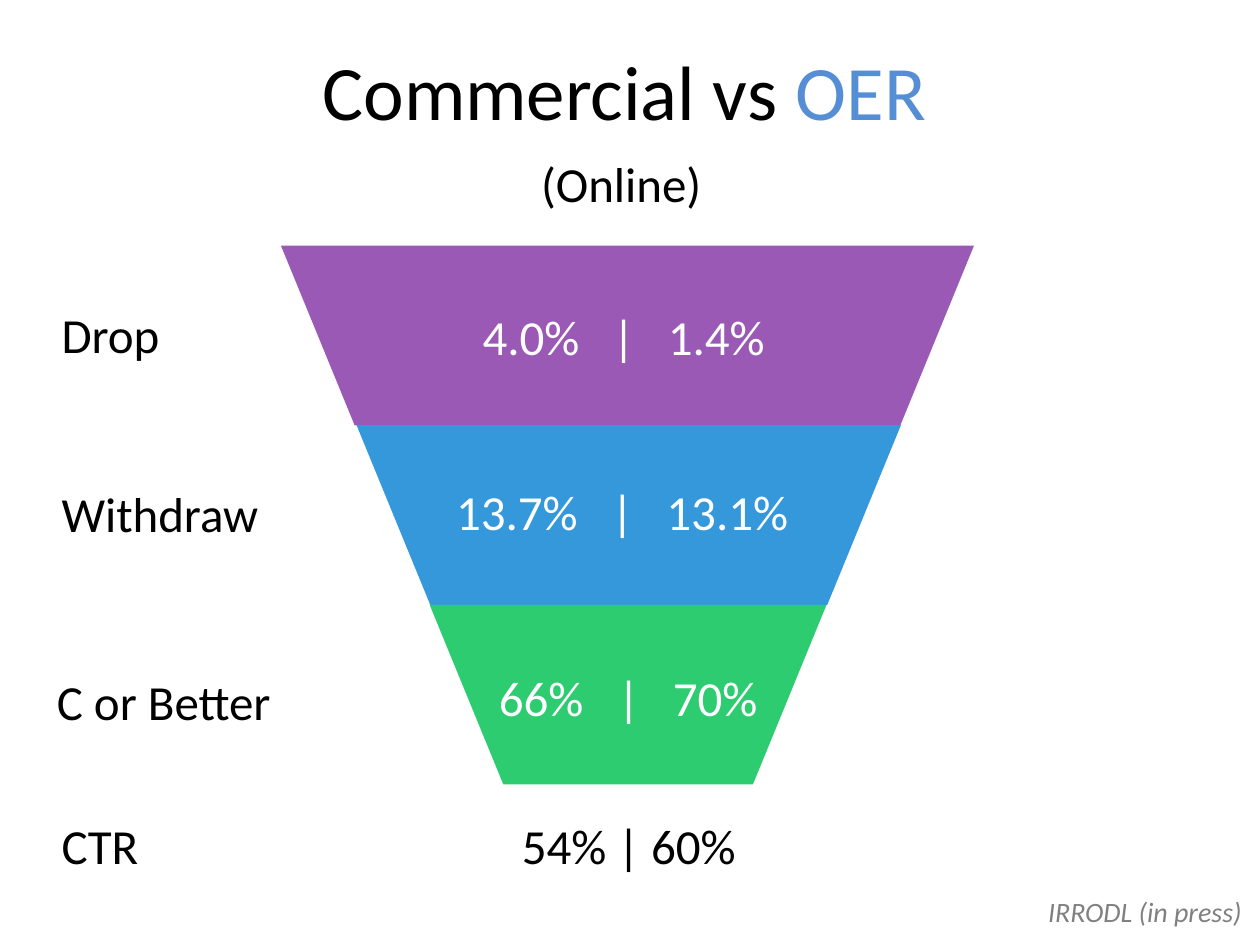
from dataclasses import dataclass

from lxml import etree
from pptx import Presentation
from pptx.dml.color import RGBColor
from pptx.enum.shapes import MSO_SHAPE
from pptx.enum.text import MSO_ANCHOR, MSO_AUTO_SIZE, PP_ALIGN
from pptx.oxml.ns import qn
from pptx.util import Inches, Pt

LEFT, CENTER = PP_ALIGN.LEFT, PP_ALIGN.CENTER
MIDDLE = MSO_ANCHOR.MIDDLE
GROW = MSO_AUTO_SIZE.SHAPE_TO_FIT_TEXT
TRAPEZOID = MSO_SHAPE.TRAPEZOID

BLACK = RGBColor(0x00, 0x00, 0x00)
WHITE = RGBColor(0xFF, 0xFF, 0xFF)
GRAY = RGBColor(0x80, 0x80, 0x80)
SKY = RGBColor(0x55, 0x8E, 0xD5)
PURPLE = RGBColor(0x9B, 0x59, 0xB6)
BLUE = RGBColor(0x34, 0x98, 0xDB)
GREEN = RGBColor(0x2E, 0xCC, 0x71)

FONT = "Calibri"
LINE = 0.57
TOP, STEP = 1.95, 1.425
GAP = 0.35


@dataclass
class Label:
    text: str
    left: float
    top: float
    width: float = 2.5
    height: float = LINE
    align: PP_ALIGN = CENTER
    size: int = 28
    color: RGBColor = BLACK
    italic: bool = False
    wrap: bool = True


@dataclass
class Band:
    left: float
    width: float
    color: RGBColor
    pair: Label
    inset: float


BANDS = [
    Band(2.23, 5.5, PURPLE,
         Label("4.0%\t|\t1.4%", 3.7, 2.38, align=LEFT, color=WHITE), 0.13),
    Band(2.83, 4.32, BLUE,
         Label("13.7%\t|\t13.1%", 3.51, 3.77, 2.86, align=LEFT, color=WHITE), 0.11),
    Band(3.41, 3.15, GREEN,
         Label("66%\t|\t70%", 3.74, 5.25, align=LEFT, color=WHITE), 0.22),
]

LABELS = [
    Label("(Online)", 3.68, 1.17),
    Label("54% | 60%", 3.74, 6.42),
    Label("Drop", 0.39, 2.37, 2.16, align=LEFT),
    Label("Withdraw", 0.39, 3.79, 2.16, align=LEFT),
    Label("C or Better", 0.22, 5.28, 2.16),
    Label("CTR", 0.39, 6.42, 2.16, align=LEFT),
    Label("IRRODL (in press)", 8.22, 7.05, 1.81, 0.37, LEFT, 16, GRAY, True, False),
]


def add_label(slide, label: Label, inset: float | None = None):
    """Draw a label; with an inset, tab stops set its bar in the middle."""
    box = slide.shapes.add_textbox(Inches(label.left), Inches(label.top),
                                   Inches(label.width), Inches(label.height))
    frame = box.text_frame
    frame.word_wrap = label.wrap
    frame.auto_size = GROW
    para = frame.paragraphs[0]
    para.add_run().text = label.text
    para.alignment = label.align
    if inset is not None:
        frame.margin_left = Inches(inset)
        mid = label.width / 2 - inset
        tabs = etree.SubElement(para._p.get_or_add_pPr(), qn("a:tabLst"))
        for pos, kind in ((mid, "ctr"), (mid + GAP, "l")):
            etree.SubElement(tabs, qn("a:tab"), pos=str(Inches(pos)), algn=kind)
    font = para.font
    font.name, font.size = FONT, Pt(label.size)
    font.italic = label.italic
    font.color.rgb = label.color
    return box


def add_band(slide, band: Band, top: float) -> None:
    shape = slide.shapes.add_shape(TRAPEZOID, Inches(band.left), Inches(top),
                                   Inches(band.width), Inches(STEP))
    shape.rotation = 180
    shape.adjustments[0] = 0.41
    shape.shadow.inherit = False
    shape.fill.solid()
    shape.fill.fore_color.rgb = band.color
    shape.line.fill.background()


def add_title(slide) -> None:
    box = add_label(slide, Label("Commercial vs ", 0.54, -0.09, 8.83, 1.61, size=44))
    frame = box.text_frame
    frame.auto_size = MSO_AUTO_SIZE.NONE
    frame.vertical_anchor = MIDDLE
    run = frame.paragraphs[0].add_run()
    run.text = "OER"
    run.font.color.rgb = SKY


def main() -> None:
    deck = Presentation()
    deck.slide_width, deck.slide_height = Inches(10), Inches(7.5)
    slide = deck.slides.add_slide(deck.slide_layouts[6])
    add_title(slide)
    for row, band in enumerate(BANDS):
        add_band(slide, band, TOP + row * STEP)
    for band in BANDS:
        add_label(slide, band.pair, band.inset)
    for label in LABELS:
        add_label(slide, label)
    deck.save("out.pptx")


if __name__ == "__main__":
    main()
